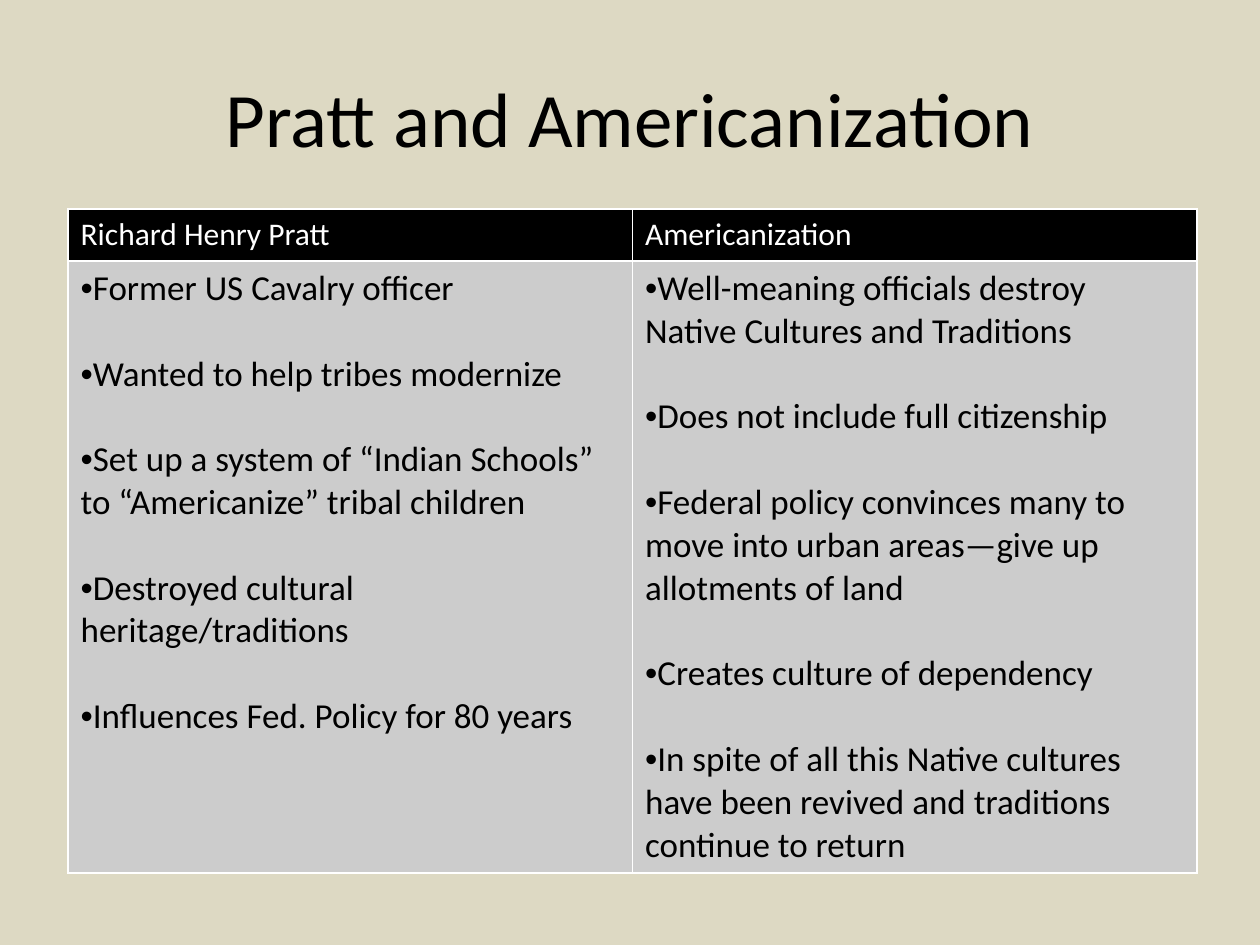
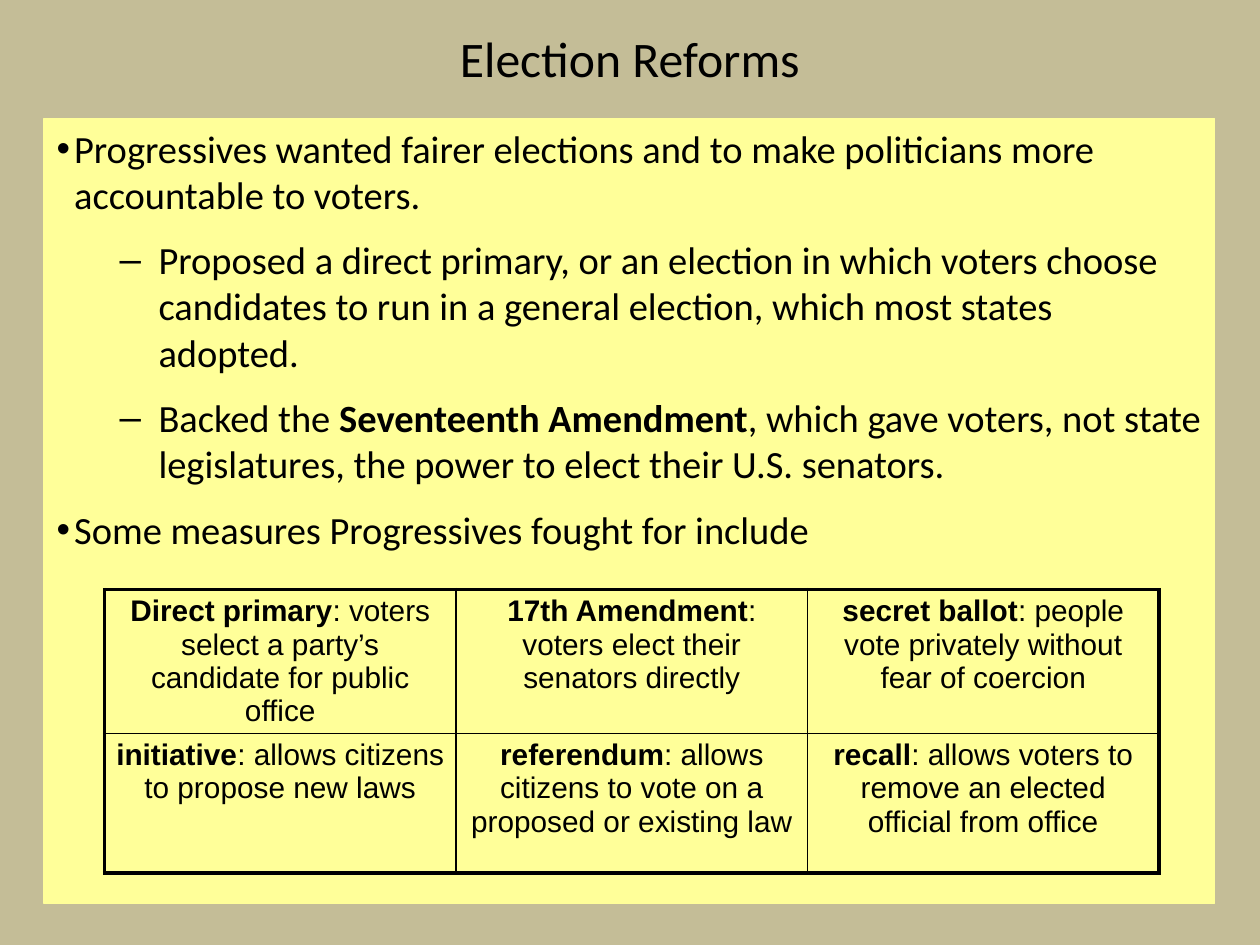
from lxml import etree
from pptx import Presentation
from pptx.dml.color import RGBColor
from pptx.enum.shapes import MSO_SHAPE
from pptx.enum.text import MSO_ANCHOR, MSO_AUTO_SIZE, PP_ALIGN
from pptx.oxml.ns import qn
from pptx.util import Inches, Pt

RECTANGLE = MSO_SHAPE.RECTANGLE
TOP, MIDDLE = MSO_ANCHOR.TOP, MSO_ANCHOR.MIDDLE
LEFT, CENTER = PP_ALIGN.LEFT, PP_ALIGN.CENTER
NO_AUTOFIT = MSO_AUTO_SIZE.NONE

BLACK = RGBColor(0x00, 0x00, 0x00)
WHITE = RGBColor(0xFF, 0xFF, 0xFF)
GRAY = RGBColor(0xCC, 0xCC, 0xCC)
SAND = RGBColor(0xDD, 0xD9, 0xC3)
KHAKI = RGBColor(0xC4, 0xBD, 0x97)
YELLOW = RGBColor(0xFF, 0xFF, 0x99)
LINE_BREAK = "\v"

TITLES = [
    ("Pratt and Americanization", SAND, (0.5, 0.3, 9, 1.25), 44, MIDDLE),
    ("Election Reforms", KHAKI, (1.69, 0.17, 6.62, 0.48), 28.4, TOP),
]
PRATT_COLUMNS = [
    ("Richard Henry Pratt", [
        "Former US Cavalry officer",
        "Wanted to help tribes modernize",
        "Set up a system of “Indian Schools” to “Americanize” tribal children",
        "Destroyed cultural heritage/traditions",
        "Influences Fed. Policy for 80 years",
    ]),
    ("Americanization", [
        "Well-meaning officials destroy Native Cultures and Traditions",
        "Does not include full citizenship",
        "Federal policy convinces many to move into urban areas—give up allotments of land",
        "Creates culture of dependency",
        "In spite of all this Native cultures have been revived and traditions continue to return",
    ]),
]
REFORM_POINTS = [
    (0, ["Progressives wanted fairer elections and to make politicians more accountable to voters."]),
    (1, ["Proposed a direct primary, or an election in which voters choose candidates "
         "to run in a general election, which most states", LINE_BREAK, "adopted."]),
    (1, ["Backed the ", "Seventeenth Amendment",
         ", which gave voters, not state legislatures, the power to elect their U.S. senators."]),
    (0, ["Some measures Progressives fought for include"]),
]
POINT_LEVELS = [("•", 0.14, -0.14), ("–", 0.81, -0.31)]
MEASURES = [
    [("Direct primary", "voters select a party’s candidate for public office"),
     ("17th Amendment", "voters elect their senators directly"),
     ("secret ballot", "people vote privately without fear of coercion")],
    [("initiative", "allows citizens to propose new laws"),
     ("referendum", "allows citizens to vote on a proposed or existing law"),
     ("recall", "allows voters to remove an elected official from office")],
]


def write_spans(para, texts, size, color, font="Calibri", align=LEFT, bold_index=None, bullet=None):
    para.alignment = align
    for index, text in enumerate(texts):
        if text == LINE_BREAK:
            para.add_line_break()
            continue
        span = para.add_run()
        span.text = text
        span.font.name = font
        span.font.size = Pt(size)
        span.font.bold = index == bold_index
        span.font.color.rgb = color
    if bullet:
        mark, margin, indent = bullet
        properties = para._p.get_or_add_pPr()
        properties.set("marL", str(Inches(margin)))
        properties.set("indent", str(Inches(indent)))
        etree.SubElement(properties, qn("a:buFont"), typeface="Arial")
        etree.SubElement(properties, qn("a:buChar"), char=mark)


def set_borders(cell, color, widths):
    properties = cell._tc.get_or_add_tcPr()
    for side, width in zip("LRTB", widths):
        line = etree.SubElement(properties, qn(f"a:ln{side}"), w=str(Pt(width)))
        fill = etree.SubElement(line, qn("a:solidFill"))
        etree.SubElement(fill, qn("a:srgbClr"), val=str(color))


deck = Presentation()
deck.slide_width = Inches(10)
deck.slide_height = Inches(7.5)

pages = []
for text, background, place, size, anchor in TITLES:
    page = deck.slides.add_slide(deck.slide_layouts[5])
    page.background.fill.solid()
    page.background.fill.fore_color.rgb = background
    title = page.shapes.title
    title.left, title.top, title.width, title.height = map(Inches, place)
    title.text_frame.auto_size = NO_AUTOFIT
    title.text_frame.vertical_anchor = anchor
    write_spans(title.text_frame.paragraphs[0], [text], size, BLACK, align=CENTER)
    pages.append(page)
pratt_page, reform_page = pages

pratt_table = pratt_page.shapes.add_table(
    2, 2, Inches(0.54), Inches(1.66), Inches(8.96), Inches(5.18)).table
pratt_table.first_row = pratt_table.horz_banding = False
pratt_table.rows[0].height = Inches(0.41)
pratt_table.rows[1].height = Inches(4.77)
for column, (heading, points) in enumerate(PRATT_COLUMNS):
    head, body = pratt_table.cell(0, column), pratt_table.cell(1, column)
    for cell, fill in ((head, BLACK), (body, GRAY)):
        set_borders(cell, WHITE, [1] * 4)
        cell.fill.solid()
        cell.fill.fore_color.rgb = fill
    write_spans(head.text_frame.paragraphs[0], [heading], 18, WHITE)
    for index, point in enumerate(points):
        para = body.text_frame.add_paragraph() if index else body.text_frame.paragraphs[0]
        para.space_before = Pt(24.4 if index else 0)
        write_spans(para, [point], 20, BLACK, bullet=("•", 0, 0))

panel = reform_page.shapes.add_shape(
    RECTANGLE, Inches(0.35), Inches(0.94), Inches(9.29), Inches(6.23))
panel.shadow.inherit = False
panel.fill.solid()
panel.fill.fore_color.rgb = YELLOW
panel.line.color.rgb = YELLOW
panel.line.width = Pt(0.75)
frame = panel.text_frame
frame.word_wrap = True
frame.vertical_anchor = TOP
for index, (level, texts) in enumerate(REFORM_POINTS):
    para = frame.add_paragraph() if index else frame.paragraphs[0]
    para.level = level
    para.space_before = Pt(11 if index else 0)
    write_spans(para, texts, 22, BLACK, bold_index=1, bullet=POINT_LEVELS[level])

measure_table = reform_page.shapes.add_table(
    2, 3, Inches(0.83), Inches(4.68), Inches(8.37), Inches(2.24)).table
measure_table.first_row = measure_table.horz_banding = False
measure_table.rows[0].height = Inches(1.13)
measure_table.rows[1].height = Inches(1.11)
for row, measures in enumerate(MEASURES):
    for column, (term, meaning) in enumerate(measures):
        cell = measure_table.cell(row, column)
        cell.margin_left = cell.margin_right = Inches(0.07)
        cell.margin_top = cell.margin_bottom = Inches(0.04)
        outer_sides = (column == 0, column == 2, row == 0, row == 1)
        set_borders(cell, BLACK, [2.25 if outer else 1 for outer in outer_sides])
        cell.fill.background()
        write_spans(cell.text_frame.paragraphs[0], [term, f": {meaning}"], 17, BLACK,
                    font="Arial", align=CENTER, bold_index=0)

deck.save("out.pptx")
